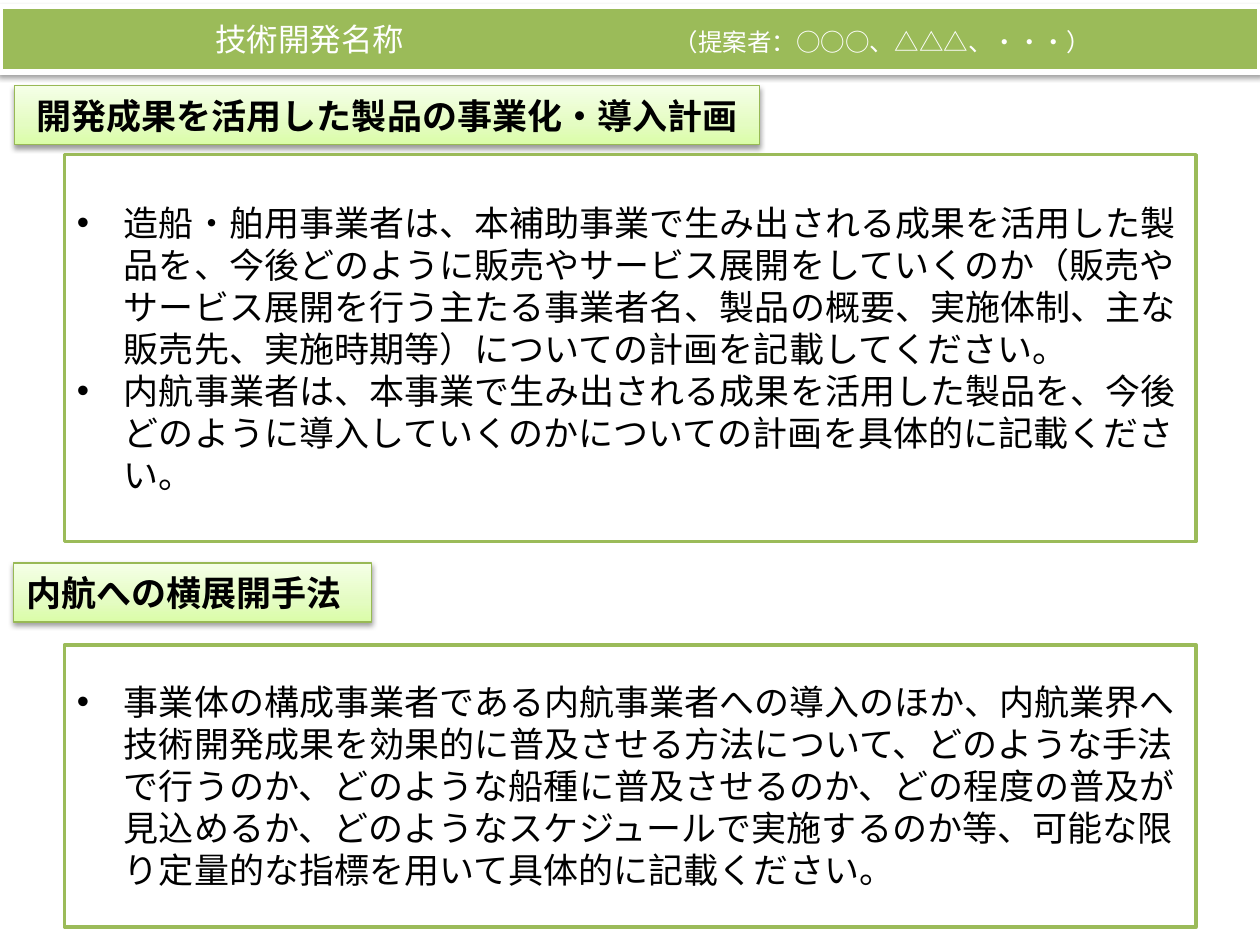
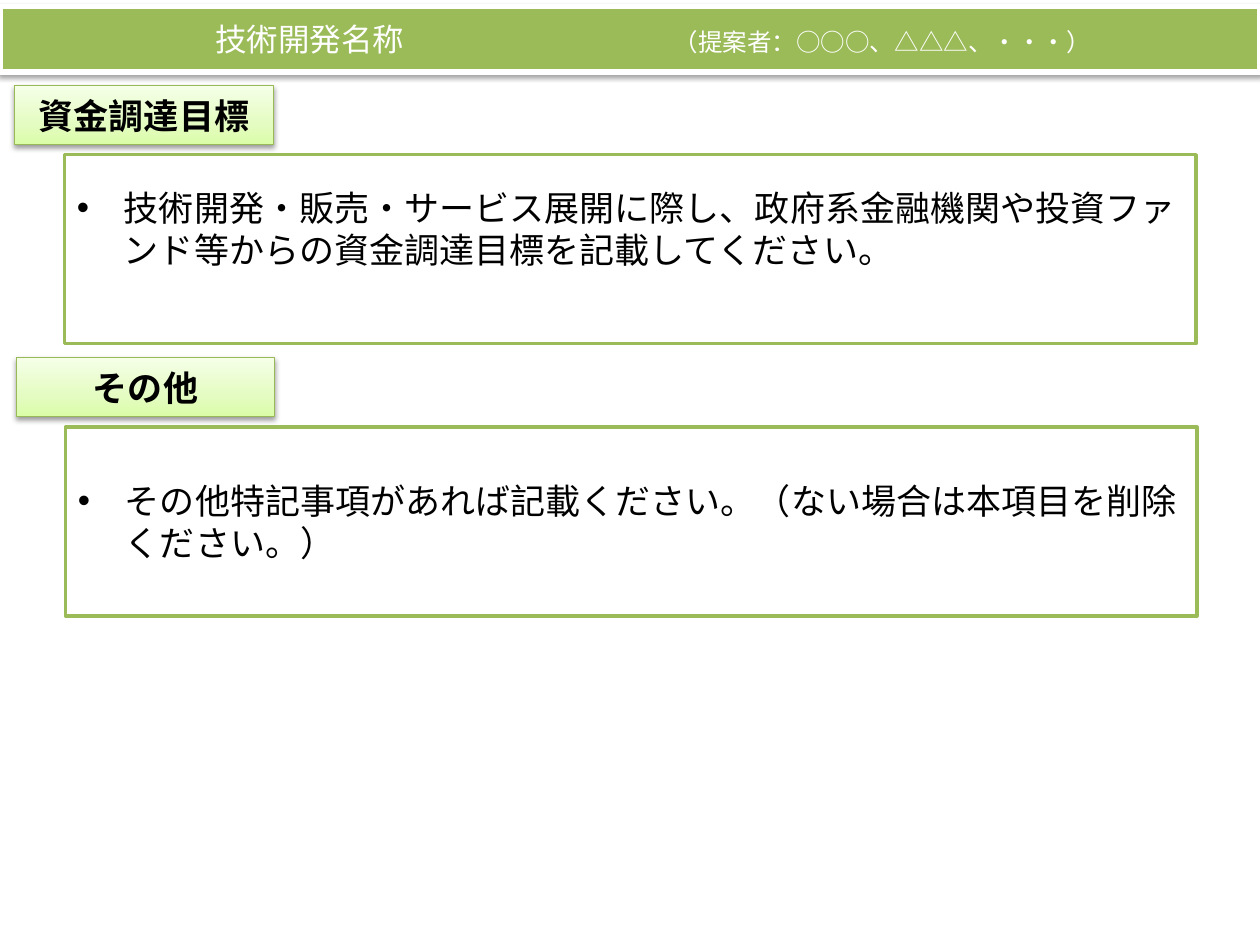
from dataclasses import dataclass

import pptx
import pptx.dml.color
import pptx.enum.shapes
import pptx.enum.text
import pptx.oxml.ns
import pptx.oxml.xmlchemy
import pptx.presentation
import pptx.shapes.base
import pptx.slide
import pptx.text.text
import pptx.util
from lxml import etree
from pptx.util import Cm

# Shared look
FONT = "Calibri"
GREEN, LABEL_EDGE = "9BBB59", "98B955"
WHITE, BLACK = "FFFFFF", "000000"
LABEL_STOPS = ((0, "DAFDA7"), (35, "E4FCC2"), (100, "F5FFE7"))
LABEL_HEIGHT = 1.19
BOX_WIDTH = 22.81
BULLET_INDENT = 0.95
LEFT = pptx.enum.text.PP_ALIGN.LEFT
CENTER = pptx.enum.text.PP_ALIGN.CENTER


@dataclass
class Section:
    """A heading label with its framed instructions; lengths in centimetres."""
    heading: str
    label_left: float
    label_top: float
    label_width: float
    box_left: float
    box_top: float
    box_height: float
    bullets: list[str]
    align: pptx.enum.text.PP_ALIGN = CENTER
    box_bottom_inset: float = 0.13


PAGES = [
    [
        Section("開発成果を活用した製品の事業化・導入計画", 0.3, 1.73, 15.01, 1.3, 3.12, 7.8, [
            "造船・舶用事業者は、本補助事業で生み出される成果を活用した製品を、今後どのように販売や"
            "サービス展開をしていくのか（販売やサービス展開を行う主たる事業者名、製品の概要、実施体制、"
            "主な販売先、実施時期等）についての計画を記載してください。",
            "内航事業者は、本事業で生み出される成果を活用した製品を、今後どのように導入していくのかに"
            "ついての計画を具体的に記載ください。",
        ]),
        Section("内航への横展開手法", 0.28, 11.35, 7.21, 1.3, 13.0, 5.69, [
            "事業体の構成事業者である内航事業者への導入のほか、内航業界へ技術開発成果を効果的に普及させる"
            "方法について、どのような手法で行うのか、どのような船種に普及させるのか、どの程度の普及が"
            "見込めるか、どのようなスケジュールで実施するのか等、可能な限り定量的な指標を用いて具体的に"
            "記載ください。",
        ], align=LEFT),
    ],
    [
        Section("資金調達目標", 0.3, 1.73, 5.21, 1.3, 3.12, 3.81, [
            "技術開発・販売・サービス展開に際し、政府系金融機関や投資ファンド等からの資金調達目標を"
            "記載してください。",
        ], box_bottom_inset=0.97),
        Section("その他", 0.33, 7.21, 5.21, 1.32, 8.61, 3.81, [
            "その他特記事項があれば記載ください。（ない場合は本項目を削除ください。）",
        ]),
    ],
]


def color(value: str) -> pptx.dml.color.RGBColor:
    return pptx.dml.color.RGBColor.from_string(value)


def add_child(parent: etree.ElementBase, tag: str, **attributes: object) -> etree.ElementBase:
    child = etree.SubElement(parent, pptx.oxml.ns.qn(tag))
    for name, value in attributes.items():
        child.set(name, str(value))
    return child


def paint(shape: pptx.shapes.base.BaseShape, fill: str, line: str, width: float) -> None:
    shape.fill.solid()
    shape.fill.fore_color.rgb = color(fill)
    shape.line.color.rgb = color(line)
    shape.line.width = pptx.util.Pt(width)
    shape.shadow.inherit = False


def add_gradient(shape: pptx.shapes.base.BaseShape) -> None:
    shape.fill.gradient()
    shape.fill.gradient_angle = 90
    stops = next(shape._element.spPr.iter(pptx.oxml.ns.qn("a:gsLst")))
    stops.clear()
    for percent, value in LABEL_STOPS:
        stop = add_child(stops, "a:gs", pos=percent * 1000)
        add_child(stop, "a:srgbClr", val=value)


def add_shadow(shape: pptx.shapes.base.BaseShape) -> None:
    effects = shape._element.spPr.find(pptx.oxml.ns.qn("a:effectLst"))
    shadow = add_child(effects, "a:outerShdw", blurRad=pptx.util.Pt(3.1),
                       dist=pptx.util.Pt(1.6), dir=5400000, rotWithShape=0)
    add_child(add_child(shadow, "a:srgbClr", val=BLACK), "a:alpha", val=38000)


def set_font(para: pptx.text.text._Paragraph, size: float, ink: str, bold: bool = False) -> None:
    para.font.name = FONT
    para.font.size = pptx.util.Pt(size)
    para.font.bold = bold
    para.font.color.rgb = color(ink)


def add_rectangle(page: pptx.slide.Slide, left: float, top: float,
                  width: float, height: float) -> pptx.shapes.base.BaseShape:
    box = page.shapes.add_shape(pptx.enum.shapes.MSO_SHAPE.RECTANGLE,
                                Cm(left), Cm(top), Cm(width), Cm(height))
    box.text_frame.word_wrap = True
    box.text_frame.vertical_anchor = pptx.enum.text.MSO_ANCHOR.MIDDLE
    return box


def format_title(page: pptx.slide.Slide) -> None:
    band = page.shapes.title
    band.left, band.top, band.width, band.height = Cm(0), Cm(0.13), Cm(25.4), Cm(1.32)
    paint(band, GREEN, WHITE, 3)
    add_shadow(band)
    frame = band.text_frame
    frame.auto_size = pptx.enum.text.MSO_AUTO_SIZE.NONE
    frame.vertical_anchor = pptx.enum.text.MSO_ANCHOR.MIDDLE
    frame.margin_left = Cm(4.34)
    para = frame.paragraphs[0]
    para.alignment = LEFT
    set_font(para, 18, WHITE)
    # The proposer starts at a tab stop
    tabs = etree.Element(pptx.oxml.ns.qn("a:tabLst"))
    add_child(tabs, "a:tab", pos=Cm(9.24), algn="l")
    para._p.get_or_add_pPr().insert_element_before(tabs, "a:defRPr", "a:extLst")
    para.add_run().text = "技術開発名称\t"
    proposer = para.add_run()
    proposer.text = "（提案者：○○○、△△△、・・・）"
    proposer.font.size = pptx.util.Pt(14)


def add_section(page: pptx.slide.Slide, section: Section) -> None:
    # Heading label
    label = add_rectangle(page, section.label_left, section.label_top,
                          section.label_width, LABEL_HEIGHT)
    paint(label, WHITE, LABEL_EDGE, 0.75)
    add_gradient(label)
    add_shadow(label)
    heading = label.text_frame.paragraphs[0]
    heading.text = section.heading
    heading.alignment = section.align
    set_font(heading, 20, BLACK, bold=True)

    # Framed bullets
    box = add_rectangle(page, section.box_left, section.box_top, BOX_WIDTH, section.box_height)
    paint(box, WHITE, GREEN, 2)
    frame = box.text_frame
    frame.margin_bottom = Cm(section.box_bottom_inset)
    for index, bullet in enumerate(section.bullets):
        para = frame.add_paragraph() if index else frame.paragraphs[0]
        para.text = bullet
        para.alignment = LEFT
        set_font(para, 20, BLACK)
        properties = para._p.get_or_add_pPr()
        properties.set("marL", str(Cm(BULLET_INDENT)))
        properties.set("indent", str(-Cm(BULLET_INDENT)))
        for tag, name, value in (("a:buFont", "typeface", "Arial"), ("a:buChar", "char", "•")):
            mark = etree.Element(pptx.oxml.ns.qn(tag))
            mark.set(name, value)
            properties.insert_element_before(mark, "a:tabLst", "a:defRPr", "a:extLst")


def main() -> None:
    deck = pptx.Presentation()
    deck.slide_width, deck.slide_height = Cm(25.4), Cm(19.05)
    title_only = deck.slide_layouts.get_by_name("Title Only")
    for sections in PAGES:
        page = deck.slides.add_slide(title_only)
        format_title(page)
        for section in sections:
            add_section(page, section)
    deck.save("out.pptx")


if __name__ == "__main__":
    main()
